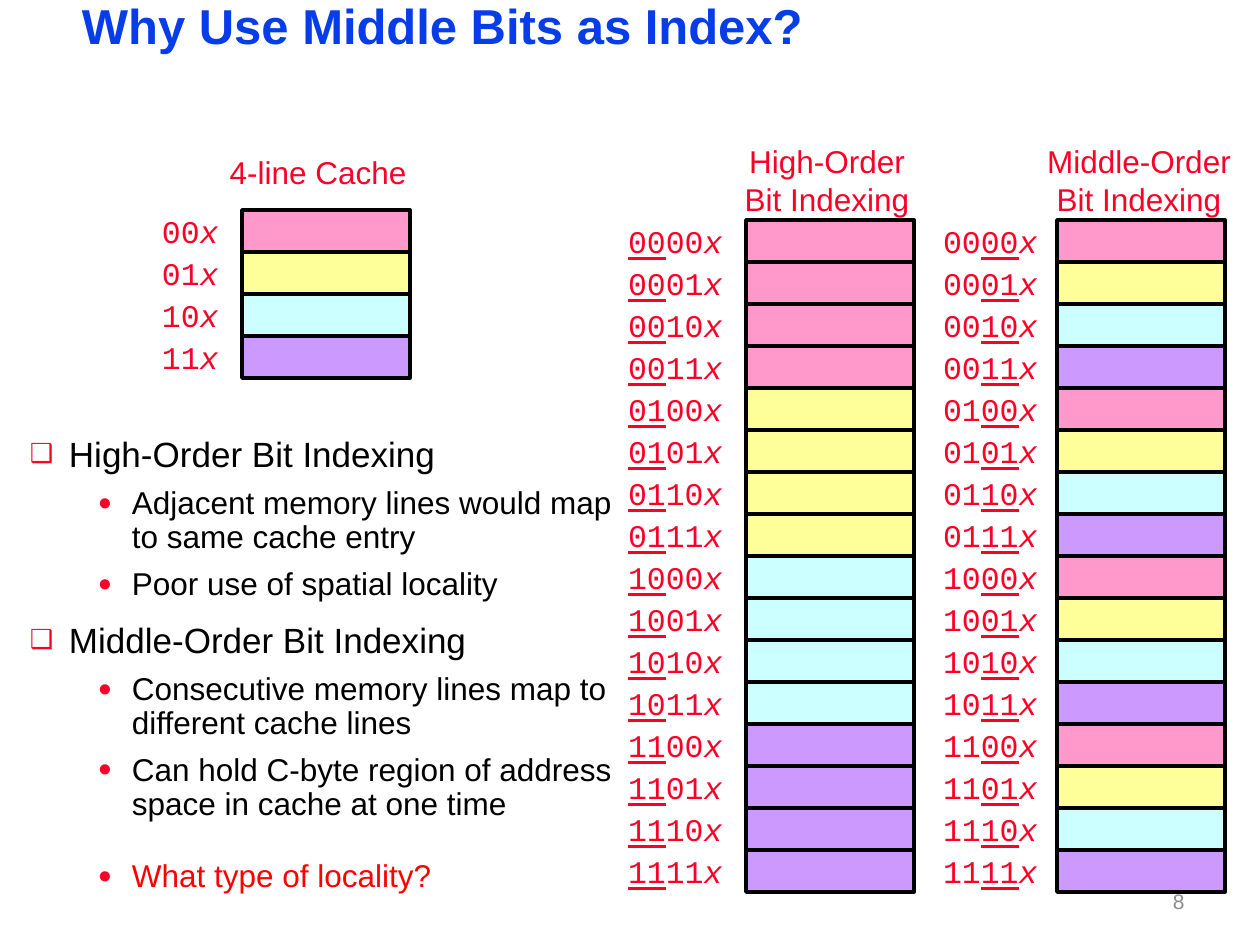
import lxml.etree
import pptx
import pptx.dml.color
import pptx.enum.shapes
import pptx.enum.text
import pptx.oxml.ns
import pptx.util

EMU_PER_PX = 914400 // 126
ROW = 42
CELL_WIDTH = 168
LABEL_WIDTH = 63
COLORS = {
    "title": "063DE8",
    "accent": "FC0128",
    "question": "FF0000",
    "ink": "000000",
    "paper": "FFFFFF",
    "number": "8C8C8C",
}
LINE_COLORS = {"00": "FF99CC", "01": "FFFF99", "10": "CCFFFF", "11": "CC99FF"}
ANCHOR = pptx.enum.text.MSO_ANCHOR
ALIGN = pptx.enum.text.PP_ALIGN
RECTANGLE = pptx.enum.shapes.MSO_SHAPE.RECTANGLE
HEADING = {"size": 20, "indent": 39, "hanging": 39, "spacing": 0.85, "before": 13, "bullet": "❑"}
DETAIL = {"size": 18, "indent": 102, "hanging": 34, "spacing": 0.9, "before": 7.2, "bullet": "●"}
QUESTION = {**DETAIL, "before": 22}
POINTS = [
    ("High-Order Bit Indexing", 0, HEADING, "ink"),
    ("Adjacent memory lines would map to same cache entry", 1, DETAIL, "ink"),
    ("Poor use of spatial locality", 1, DETAIL, "ink"),
    ("Middle-Order Bit Indexing", 0, HEADING, "ink"),
    ("Consecutive memory lines map to different cache lines", 1, DETAIL, "ink"),
    ("Can hold C-byte region of address space in cache at one time", 1, DETAIL, "ink"),
    ("What type of locality?", 1, QUESTION, "question"),
]


def px(length):
    return pptx.util.Emu(length * EMU_PER_PX)


def rgb(value):
    return pptx.dml.color.RGBColor.from_string(value)


def add_run(para, text, size, color, font="Arial", bold=False, italic=False, underline=False):
    span = para.add_run()
    span.text = text
    span.font.name = font
    span.font.size = pptx.util.Pt(size)
    span.font.color.rgb = rgb(COLORS[color])
    span.font.bold = bold
    span.font.italic = italic
    span.font.underline = underline


def place_placeholder(holder, box):
    holder.left, holder.top, holder.width, holder.height = map(px, box)
    frame = holder.text_frame
    frame.margin_left = frame.margin_right = px(9)
    frame.margin_top = frame.margin_bottom = px(4)
    frame.vertical_anchor = ANCHOR.TOP
    frame.auto_size = pptx.enum.text.MSO_AUTO_SIZE.NONE
    frame.word_wrap = True
    return frame


def fill_title(page, box):
    para = place_placeholder(page.shapes.title, box).paragraphs[0]
    para.alignment = ALIGN.LEFT
    para.line_spacing = 0.87
    add_run(para, "Why Use Middle Bits as Index?", 28, "title", bold=True)


def set_bullet(para, style):
    properties = para._p.get_or_add_pPr()
    properties.set("marL", str(px(style["indent"])))
    properties.set("indent", str(px(-style["hanging"])))
    qn = pptx.oxml.ns.qn
    color = lxml.etree.SubElement(properties, qn("a:buClr"))
    lxml.etree.SubElement(color, qn("a:srgbClr"), val=COLORS["accent"])
    lxml.etree.SubElement(properties, qn("a:buSzPct"), val="75000")
    lxml.etree.SubElement(properties, qn("a:buChar"), char=style["bullet"])


def fill_points(page, box):
    frame = place_placeholder(page.placeholders[1], box)
    for index, (text, level, style, color) in enumerate(POINTS):
        para = frame.add_paragraph() if index else frame.paragraphs[0]
        para.level = level
        para.alignment = ALIGN.LEFT
        para.line_spacing = style["spacing"]
        para.space_before = pptx.util.Pt(style["before"])
        set_bullet(para, style)
        add_run(para, text, style["size"], color)


def add_rectangle(page, left, top, width, fill):
    shape = page.shapes.add_shape(RECTANGLE, px(left), px(top), px(width), px(ROW))
    shape.shadow.inherit = False
    shape.fill.solid()
    shape.fill.fore_color.rgb = rgb(fill)
    return shape


def add_cell(page, left, top, fill):
    cell = add_rectangle(page, left, top, CELL_WIDTH, fill)
    cell.line.color.rgb = rgb(COLORS["ink"])
    cell.line.width = pptx.util.Pt(2)


def add_label(page, left, top, bits, index_start):
    label = add_rectangle(page, left, top, LABEL_WIDTH, COLORS["paper"])
    label.line.fill.background()
    frame = label.text_frame
    frame.word_wrap = False
    frame.vertical_anchor = ANCHOR.MIDDLE
    para = frame.paragraphs[0]
    para.alignment = ALIGN.RIGHT
    for start in range(0, len(bits), 2):
        underline = len(bits) > 2 and start == index_start
        add_run(para, bits[start:start + 2], 18, "accent", "Courier New", underline=underline)
    add_run(para, "x", 18, "accent", "Courier New", italic=True)


def add_heading(page, box, lines):
    frame = page.shapes.add_textbox(*map(px, box)).text_frame
    frame.word_wrap = False
    for index, text in enumerate(lines):
        para = frame.add_paragraph() if index else frame.paragraphs[0]
        para.alignment = ALIGN.CENTER
        add_run(para, text, 18, "accent")


def add_memory(page, left, top, cell_offset, bit_count, index_start, heading_box, heading):
    heading_left, heading_top, width, height = heading_box
    add_heading(page, (left + heading_left, top + heading_top, width, height), heading)
    for row in range(2 ** bit_count):
        bits = format(row, f"0{bit_count}b")
        row_top = top + row * ROW
        fill = LINE_COLORS[bits[index_start:index_start + 2]]
        add_cell(page, left + cell_offset, row_top, fill)
        add_label(page, left, row_top, bits, index_start)


def add_page_number(page, box):
    frame = page.shapes.add_textbox(*map(px, box)).text_frame
    frame.word_wrap = True
    frame.vertical_anchor = ANCHOR.MIDDLE
    para = frame.paragraphs[0]
    para.alignment = ALIGN.RIGHT
    add_run(para, "8", 12, "number")


def main():
    deck = pptx.Presentation()
    deck.slide_width, deck.slide_height = px(1260), px(945)
    page = deck.slides.add_slide(deck.slide_layouts[1])
    fill_title(page, (73, 0, 1124, 58))
    fill_points(page, (21, 435, 604, 485))
    add_memory(page, 168, 210, 74, 2, 0, (45, -63, 210, 50), ["4-line Cache"])
    add_memory(page, 672, 220, 74, 4, 0, (52, -84, 206, 88), ["High-Order", "Bit Indexing"])
    add_memory(page, 987, 220, 70, 4, 2, (41, -84, 222, 88), ["Middle-Order", "Bit Indexing"])
    add_page_number(page, (903, 876, 294, 50))
    deck.save("out.pptx")


if __name__ == "__main__":
    main()
